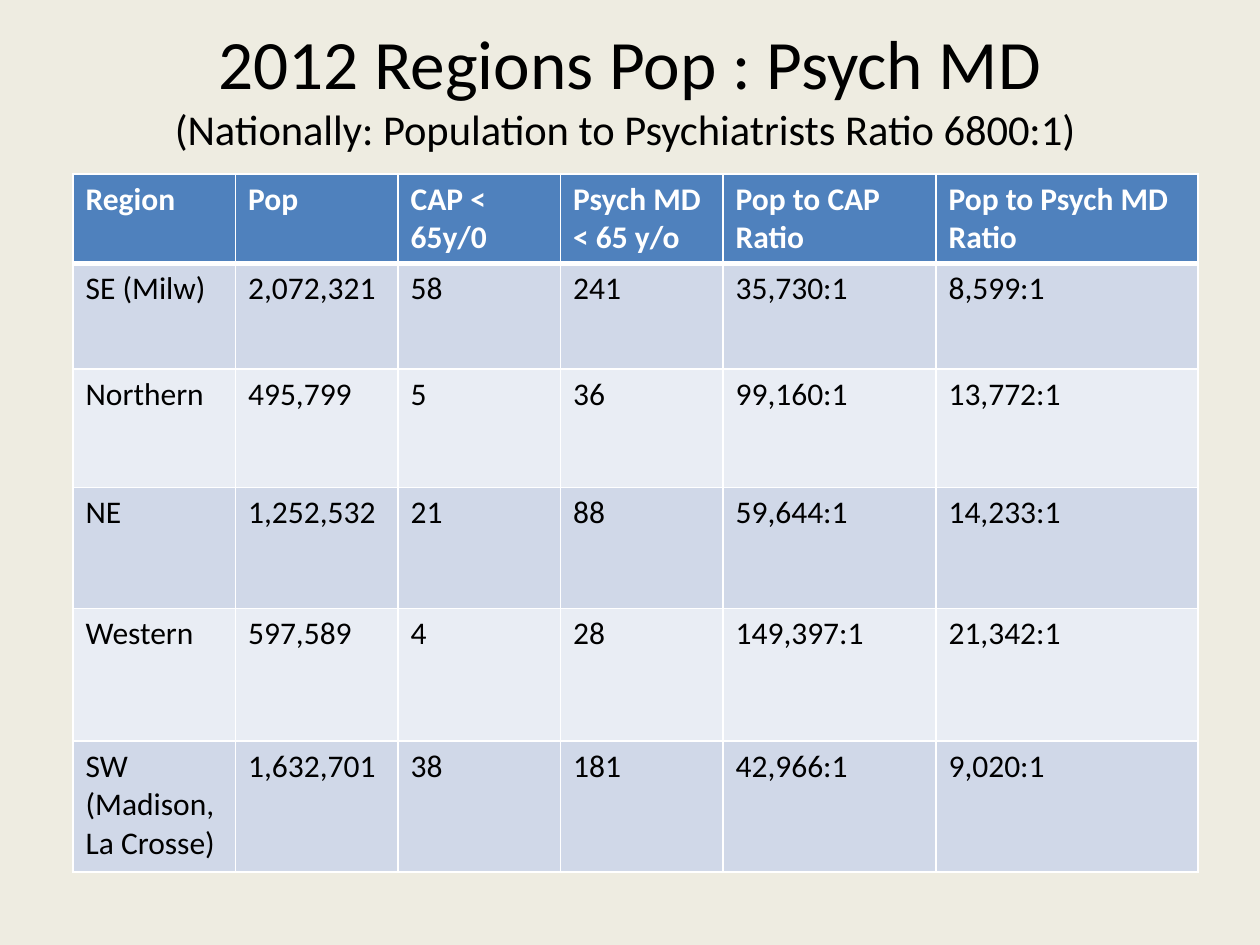
import pptx
import pptx.dml.color
import pptx.enum.text
import pptx.oxml
import pptx.oxml.ns
import pptx.util

Inches = pptx.util.Inches
Pt = pptx.util.Pt

COLORS = {
    "background": "EEECE1",
    "text": "000000",
    "header": "4F81BD",
    "header_text": "FFFFFF",
    "odd_row": "D0D8E8",
    "even_row": "E9EDF4",
    "border": "FFFFFF",
}
FONT = "Calibri"
TITLE_LINES = [
    ("2012 Regions Pop : Psych MD", 39.6),
    ("(Nationally: Population to Psychiatrists Ratio 6800:1) ", 24.3),
]
COLUMN_WIDTHS = [1.29, 1.29, 1.29, 1.29, 1.69, 2.08]
ROW_HEIGHTS = [0.7, 0.84, 0.94, 0.96, 1.05, 1.04]
REGIONS = [
    ["Region", "Pop", "CAP < 65y/0", "Psych MD < 65 y/o", "Pop to CAP Ratio", "Pop to Psych MD Ratio"],
    ["SE (Milw)", "2,072,321", "58", "241", "35,730:1", "8,599:1"],
    ["Northern", "495,799", "5", "36", "99,160:1", "13,772:1"],
    ["NE", "1,252,532", "21", "88", "59,644:1", "14,233:1"],
    ["Western", "597,589", "4", "28", "149,397:1", "21,342:1"],
    ["SW (Madison, La Crosse)", "1,632,701", "38", "181", "42,966:1", "9,020:1"],
]


def rgb(name):
    """Return the named palette colour."""
    return pptx.dml.color.RGBColor.from_string(COLORS[name])


def format_run(run, size, color, bold=False):
    """Apply the slide font to a run."""
    for attribute, value in {"name": FONT, "size": Pt(size), "bold": bold}.items():
        setattr(run.font, attribute, value)
    run.font.color.rgb = rgb(color)


def add_borders(cell, widths):
    """Draw the cell borders, given widths in points by side."""
    properties = cell._tc.get_or_add_tcPr()
    for side, width in widths.items():
        properties.append(pptx.oxml.parse_xml(
            f'<a:ln{side} {pptx.oxml.ns.nsdecls("a")} w="{Pt(width)}"><a:solidFill>'
            f'<a:srgbClr val="{COLORS["border"]}"/></a:solidFill></a:ln{side}>'
        ))


def place_title(slide, left, top, width, height):
    """Fill the title placeholder with the heading and its subheading."""
    title = slide.shapes.title
    box = {"left": left, "top": top, "width": width, "height": height}
    for attribute, value in box.items():
        setattr(title, attribute, Inches(value))
    frame = title.text_frame
    layout = {
        "word_wrap": True,
        "auto_size": pptx.enum.text.MSO_AUTO_SIZE.NONE,
        "vertical_anchor": pptx.enum.text.MSO_ANCHOR.MIDDLE,
    }
    for attribute, value in layout.items():
        setattr(frame, attribute, value)
    heading = frame.paragraphs[0]
    heading.alignment = pptx.enum.text.PP_ALIGN.CENTER
    for index, (line, size) in enumerate(TITLE_LINES):
        if index:
            heading.add_line_break()
        run = heading.add_run()
        run.text = line
        format_run(run, size, "text")


def fill_cell(cell, text, row):
    """Write and style one cell according to its row."""
    is_header = row == 0
    below_header = row == 1
    add_borders(cell, {"L": 1, "R": 1, "T": 3 if below_header else 1, "B": 3 if is_header else 1})
    cell.fill.solid()
    band = "header" if is_header else ("odd_row" if row % 2 else "even_row")
    cell.fill.fore_color.rgb = rgb(band)
    run = cell.text_frame.paragraphs[0].add_run()
    run.text = text
    format_run(run, 18, "header_text" if is_header else "text", is_header)


def place_regions(slide, left, top):
    """Add the table of regions with its corner at the given point."""
    regions = slide.shapes.add_table(
        len(ROW_HEIGHTS), len(COLUMN_WIDTHS), Inches(left), Inches(top),
        Inches(sum(COLUMN_WIDTHS)), Inches(sum(ROW_HEIGHTS)),
    ).table
    for column, width in zip(regions.columns, COLUMN_WIDTHS):
        column.width = Inches(width)
    for row, height in zip(regions.rows, ROW_HEIGHTS):
        row.height = Inches(height)
    for row, values in enumerate(REGIONS):
        for column, text in enumerate(values):
            fill_cell(regions.cell(row, column), text, row)


def main():
    """Build and save the slide."""
    deck = pptx.Presentation()
    deck.slide_width, deck.slide_height = Inches(10), Inches(7.5)
    slide = deck.slides.add_slide(deck.slide_layouts.get_by_name("Title Only"))
    slide.background.fill.solid()
    slide.background.fill.fore_color.rgb = rgb("background")
    place_title(slide, 0.5, 0.3, 9, 0.78)
    place_regions(slide, 0.58, 1.38)
    deck.save("out.pptx")


if __name__ == "__main__":
    main()
